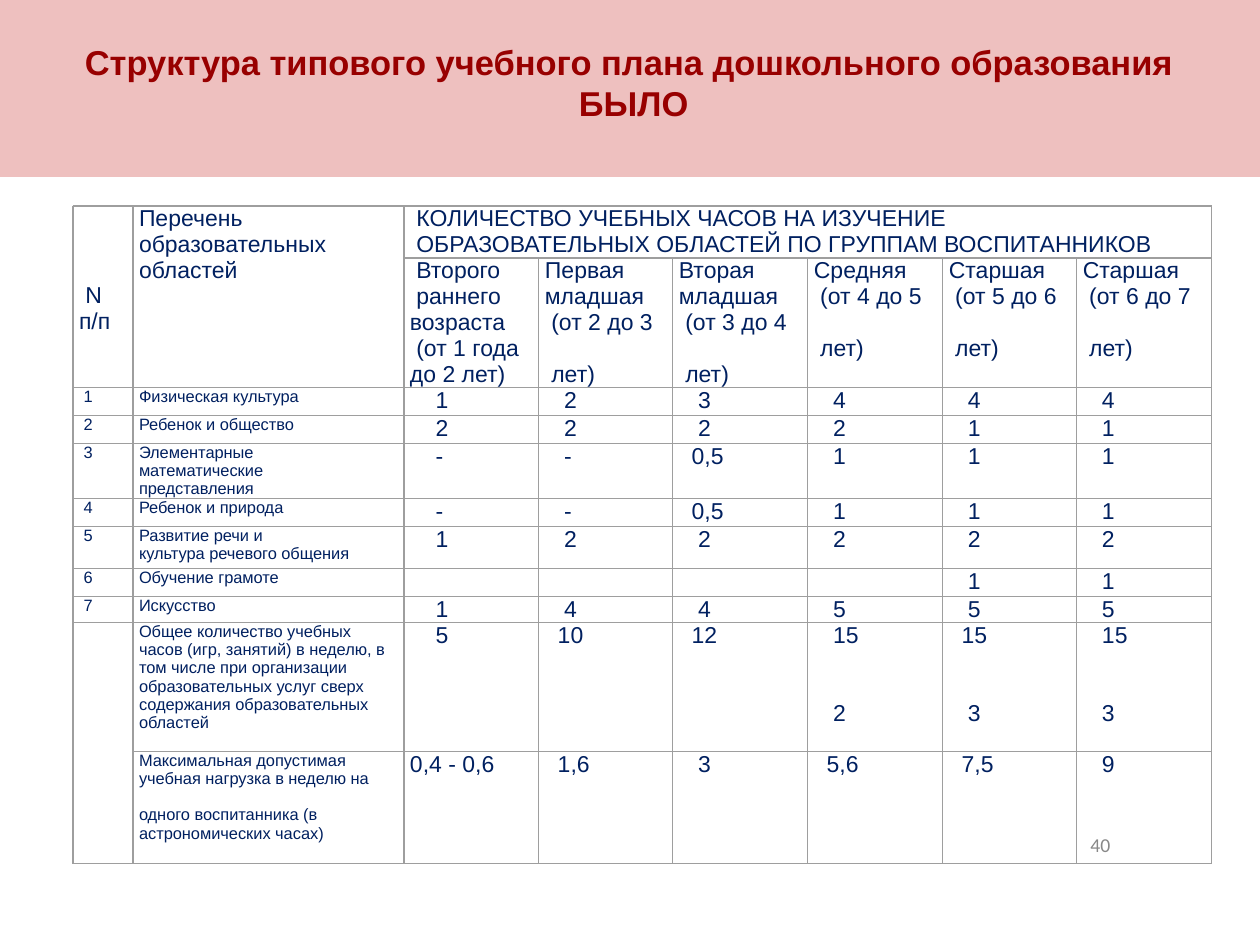
import lxml.etree
import pptx
import pptx.dml.color
import pptx.enum.text
import pptx.oxml.ns
import pptx.util

PX = 7741
ROSE = pptx.dml.color.RGBColor(0xEE, 0xC0, 0xBF)
MAROON = pptx.dml.color.RGBColor(0x98, 0x00, 0x00)
NAVY = pptx.dml.color.RGBColor(0x00, 0x20, 0x60)
GRID = pptx.dml.color.RGBColor(0x9E, 0x9E, 0x9E)
GRAY = pptx.dml.color.RGBColor(0x88, 0x88, 0x88)
ALIGN = pptx.enum.text.PP_ALIGN
ANCHOR = pptx.enum.text.MSO_ANCHOR

LARGE, SMALL = 14, 10
SPACE = 6.4
COLUMNS = [60, 271] + [135, 134, 135] * 2
ROWS = [52, 129, 28, 28, 55, 28, 42, 26, 26, 129, 112]

HOURS_HEADING = " КОЛИЧЕСТВО УЧЕБНЫХ ЧАСОВ НА ИЗУЧЕНИЕ\n ОБРАЗОВАТЕЛЬНЫХ ОБЛАСТЕЙ ПО ГРУППАМ ВОСПИТАННИКОВ"
GROUPS = [
    (" Второго\n раннего\nвозраста\n (от 1 года до 2 лет)", 0),
    ("Первая\nмладшая\n (от 2 до 3\n лет)", 16),
    ("Вторая\nмладшая\n (от 3 до 4\n лет)", 16),
    ("Средняя\n (от 4 до 5\n лет)", 16),
    ("Старшая\n (от 5 до 6\n лет)", 16),
    ("Старшая\n (от 6 до 7\n лет)", 16),
]
AREAS = [
    (" 1", "Физическая культура", ["1", "2", "3", "4", "4", "4"]),
    (" 2", "Ребенок и общество", ["2", "2", "2", "2", "1", "1"]),
    (" 3", "Элементарные\nматематические\nпредставления", ["-", "-", "0,5", "1", "1", "1"]),
    (" 4", "Ребенок и природа", ["-", "-", "0,5", "1", "1", "1"]),
    (" 5", "Развитие речи и\nкультура речевого общения", ["1", "2", "2", "2", "2", "2"]),
    (" 6", "Обучение грамоте", ["", "", "", "", "1", "1"]),
    (" 7", "Искусство", ["1", "4", "4", "5", "5", "5"]),
    ("", "Общее количество учебных\nчасов (игр, занятий) в неделю, в том числе при организации\n"
         "образовательных услуг сверх\nсодержания образовательных\nобластей",
     ["5", "10", "12", " 15\n 2", "15\n 3", " 15\n 3"]),
    ("", "Максимальная допустимая\nучебная нагрузка в неделю на\nодного воспитанника (в астрономических часах)",
     ["0,4 - 0,6", "1,6", "3", "5,6", "7,5", "9"]),
]


def px(length):
    return pptx.util.Emu(round(length * PX))


def apply(target, values):
    for name, value in values.items():
        setattr(target, name, value)


def write_lines(frame, text, size, color, font="Arial", bold=False, align=ALIGN.LEFT, gap=0):
    lines = text.split("\n")
    for index, line in enumerate(lines):
        paragraph = frame.paragraphs[0] if index == 0 else frame.add_paragraph()
        apply(paragraph, {"alignment": align, "space_before": pptx.util.Pt(0)})
        if gap and index == len(lines) - 1:
            paragraph.space_before = pptx.util.Pt(gap)
        if line:
            run = paragraph.add_run()
            run.text = line
            apply(run.font, {"name": font, "size": pptx.util.Pt(size), "bold": bold})
            run.font.color.rgb = color
        else:
            lxml.etree.SubElement(paragraph._p, pptx.oxml.ns.qn("a:endParaRPr"), sz=str(size * 100))


def draw_borders(cell):
    properties = cell._tc.get_or_add_tcPr()
    for side in ("lnL", "lnR", "lnT", "lnB"):
        line = lxml.etree.SubElement(properties, pptx.oxml.ns.qn("a:" + side), w="9525")
        fill = lxml.etree.SubElement(line, pptx.oxml.ns.qn("a:solidFill"))
        lxml.etree.SubElement(fill, pptx.oxml.ns.qn("a:srgbClr"), val=str(GRID))


def fill_cell(cell, text, size, left=6, top=0, gap=0):
    apply(cell, {"margin_left": px(left), "margin_top": px(top)})
    write_lines(cell.text_frame, text, size, NAVY, gap=gap)


def hours_indent(column, text):
    first_line = text.split("\n")[0].strip()
    if len(first_line) > 3:
        return 6
    if len(first_line) > 1:
        return 6 + 2 * SPACE
    return 6 + (4 if column == 0 else 3) * SPACE


def add_title(slide):
    title = slide.shapes.title
    apply(title, {"left": px(-17), "top": px(-13), "width": px(1292), "height": px(190)})
    title.fill.solid()
    title.fill.fore_color.rgb = ROSE
    apply(title.text_frame, {"word_wrap": True, "vertical_anchor": ANCHOR.MIDDLE,
                             "auto_size": pptx.enum.text.MSO_AUTO_SIZE.NONE})
    write_lines(title.text_frame, "Структура типового учебного плана дошкольного образования\n БЫЛО",
                21, MAROON, bold=True, align=ALIGN.CENTER)


def add_plan(slide):
    plan = slide.shapes.add_table(len(ROWS), len(COLUMNS), px(73), px(206),
                                  px(sum(COLUMNS)), px(sum(ROWS))).table
    apply(plan, {"first_row": False, "horz_banding": False})
    for column, width in zip(plan.columns, COLUMNS):
        column.width = px(width)
    for row, height in zip(plan.rows, ROWS):
        row.height = px(height)
    for cell in plan.iter_cells():
        draw_borders(cell)
        cell.fill.background()
        apply(cell, {"margin_left": px(6), "margin_right": px(6), "margin_top": 0, "margin_bottom": 0})

    for first, last in (((0, 0), (1, 0)), ((0, 1), (1, 1)), ((0, 2), (0, 7)), ((9, 0), (10, 0))):
        plan.cell(*first).merge(plan.cell(*last))

    fill_cell(plan.cell(0, 0), " N\nп/п", LARGE, top=77)
    fill_cell(plan.cell(0, 1), "Перечень образовательных областей", LARGE)
    fill_cell(plan.cell(0, 2), HOURS_HEADING, LARGE)
    for column, (group, gap) in enumerate(GROUPS):
        fill_cell(plan.cell(1, column + 2), group, LARGE, gap=gap)
    for row, (number, area, hours) in enumerate(AREAS, 2):
        fill_cell(plan.cell(row, 0), number, SMALL)
        fill_cell(plan.cell(row, 1), area, SMALL, gap=11 if row == len(ROWS) - 1 else 0)
        for column, value in enumerate(hours):
            fill_cell(plan.cell(row, column + 2), value, LARGE, left=hours_indent(column, value),
                      gap=32 if "\n" in value else 0)


def add_page_number(slide):
    number = slide.shapes.add_textbox(px(847), px(821), px(275), px(47))
    apply(number.text_frame, {"word_wrap": True, "vertical_anchor": ANCHOR.MIDDLE})
    write_lines(number.text_frame, "40", 12, GRAY, font="Calibri", align=ALIGN.RIGHT)


def main():
    deck = pptx.Presentation()
    apply(deck, {"slide_width": px(1260), "slide_height": px(945)})
    slide = deck.slides.add_slide(deck.slide_layouts[5])
    add_title(slide)
    add_plan(slide)
    add_page_number(slide)
    deck.save("out.pptx")


if __name__ == "__main__":
    main()
